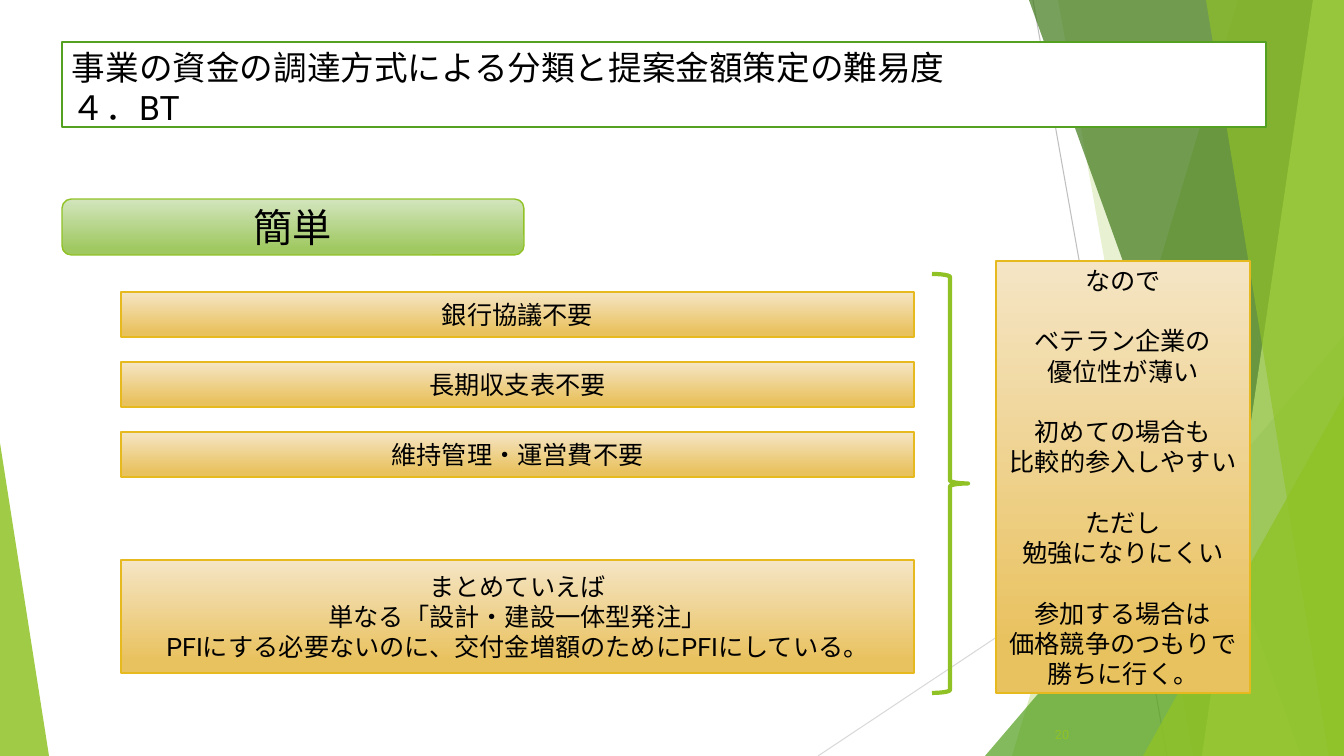
from lxml import etree
from pptx import Presentation
from pptx import util as u
from pptx.dml.color import RGBColor
from pptx.enum import shapes, text
from pptx.oxml import ns

PX = 914400 / 100.8
WIDTH, HEIGHT = 1344, 756
FONT = "Roboto"
COLORS = {
    "black": "000000", "white": "FFFFFF", "lime": "90C226", "green": "54A021",
    "forest": "3F7819", "pale": "C0E474", "gold": "E6B91E",
    "gray": "BFBFBF", "silver": "D9D9D9",
}
GREEN_FADE = ("D3E5BE", "A0C962")
GOLD_FADE = ("F5E5C5", "E9C260")

# from x, from y, to x, to y, colour
BACK_LINES = [(1033, 0, 1167, 756, "gray"), (1344, 406, 818, 756, "silver")]
# Bands reach the right edge: left x at the top, left x at the bottom, colour, opacity
BAND, TRIANGLE = "band", "triangle"
DECORATION = [
    (BAND, (1238, 1012), "lime", 30),
    (BAND, (1058, 1193), "lime", 20),
    (TRIANGLE, (985, 336, 359, 420, 1), "green", 72),
    (BAND, (1029, 1301), "forest", 70),
    (BAND, (1313, 1202), "pale", 70),
    (BAND, (1206, 1329), "lime", 65),
    (TRIANGLE, (1143, 396, 201, 360, 1), "lime", 80),
    (TRIANGLE, (0, 443, 49, 313, 0), "lime", 85),
]

TITLE = ["事業の資金の調達方式による分類と提案金額策定の難易度", "４．BT"]
VERDICT = "簡単"
REASONS = ["銀行協議不要", "長期収支表不要", "維持管理・運営費不要"]
SUMMARY = [
    "まとめていえば",
    "単なる「設計・建設一体型発注」",
    "PFIにする必要ないのに、交付金増額のためにPFIにしている。",
]
CONCLUSIONS = [
    ["なので"],
    ["ベテラン企業の", "優位性が薄い"],
    ["初めての場合も", "比較的参入しやすい"],
    ["ただし", "勉強になりにくい"],
    ["参加する場合は", "価格競争のつもりで", "勝ちに行く。"],
]
PAGE_NUMBER = "20"

REASON_LEFT, REASON_TOP, REASON_WIDTH, REASON_HEIGHT = 121, 292, 793, 45
REASON_STEP = 70
GROUP_GAP = 21.6


def emu(*lengths):
    return [u.Emu(round(length * PX)) for length in lengths]


def rgb(name):
    return RGBColor.from_string(COLORS.get(name, name))


def fill_solid(shape, color, opacity=100):
    shape.fill.solid()
    shape.fill.fore_color.rgb = rgb(color)
    if opacity < 100:
        color_element = shape.fill._xPr.find(ns.qn("a:solidFill"))[0]
        alpha = etree.SubElement(color_element, ns.qn("a:alpha"))
        alpha.set("val", str(opacity * 1000))


def fill_fade(shape, fade):
    """Fill from top to bottom, the second colour being reached at 88 %."""
    shape.fill.gradient()
    shape.fill.gradient_angle = 270
    for stop, color, position in zip(shape.fill.gradient_stops, fade, (0, 0.88)):
        stop.color.rgb = rgb(color)
        stop.position = position


def set_line(shape, color, width):
    shape.line.color.rgb = rgb(color)
    shape.line.width = u.Pt(width)


def add_preset(slide, kind, box):
    shape = slide.shapes.add_shape(kind, *emu(*box))
    shape.shadow.inherit = False
    return shape


def add_run(paragraph, words, size, color="black"):
    run = paragraph.add_run()
    run.text = words
    run.font.size = u.Pt(size)
    run.font.color.rgb = rgb(color)
    run.font.name = FONT
    east_asian = etree.SubElement(run.font._element, ns.qn("a:ea"))
    east_asian.set("typeface", FONT)


def add_text(shape, groups, size):
    """Write centred lines, with one line of space between groups."""
    frame = shape.text_frame
    frame.word_wrap = True
    frame.vertical_anchor = text.MSO_ANCHOR.MIDDLE
    paragraph = frame.paragraphs[0]
    for group_index, group in enumerate(groups):
        for line_index, words in enumerate(group):
            if group_index or line_index:
                paragraph = frame.add_paragraph()
            if group_index and not line_index:
                paragraph.space_before = u.Pt(GROUP_GAP)
            paragraph.alignment = text.PP_ALIGN.CENTER
            add_run(paragraph, words, size)


def add_fade_box(slide, box, groups, size=18, fade=GOLD_FADE, line="gold",
                 kind=shapes.MSO_SHAPE.RECTANGLE):
    shape = add_preset(slide, kind, box)
    fill_fade(shape, fade)
    set_line(shape, line, 1)
    add_text(shape, groups, size)


def add_background(slide):
    for *ends, color in BACK_LINES:
        line = slide.shapes.add_connector(shapes.MSO_CONNECTOR.STRAIGHT, *emu(*ends))
        set_line(line, color, 0.75)
        etree.SubElement(line._element.spPr, ns.qn("a:effectLst"))
    for kind, geometry, color, opacity in DECORATION:
        if kind == BAND:
            top, bottom = geometry
            builder = slide.shapes.build_freeform(top, 0, scale=PX)
            builder.add_line_segments([(WIDTH, 0), (WIDTH, HEIGHT), (bottom, HEIGHT)])
            shape = builder.convert_to_shape()
            shape.shadow.inherit = False
        else:
            *box, apex = geometry
            shape = add_preset(slide, shapes.MSO_SHAPE.ISOSCELES_TRIANGLE, box)
            shape.adjustments[0] = apex
        fill_solid(shape, color, opacity)
        shape.line.fill.background()


def add_title(slide):
    title = add_preset(slide, shapes.MSO_SHAPE.RECTANGLE, (62, 42, 1204, 85))
    fill_solid(title, "white")
    set_line(title, "green", 1.5)
    title.text_frame.word_wrap = True
    title.text_frame.vertical_anchor = text.MSO_ANCHOR.TOP
    paragraph = title.text_frame.paragraphs[0]
    paragraph.alignment = text.PP_ALIGN.LEFT
    add_run(paragraph, TITLE[0], 24)
    paragraph.add_line_break()
    add_run(paragraph, TITLE[1], 24)


def add_page_number(slide):
    number = slide.shapes.add_textbox(*emu(1000, 716, 79, 37))
    number.text_frame.word_wrap = True
    number.text_frame.vertical_anchor = text.MSO_ANCHOR.MIDDLE
    paragraph = number.text_frame.paragraphs[0]
    paragraph.alignment = text.PP_ALIGN.RIGHT
    add_run(paragraph, PAGE_NUMBER, 9, "lime")


def main():
    presentation = Presentation()
    presentation.slide_width, presentation.slide_height = emu(WIDTH, HEIGHT)
    slide = presentation.slides.add_slide(presentation.slide_layouts[6])
    add_background(slide)
    add_title(slide)
    add_fade_box(slide, (62, 199, 462, 56), [[VERDICT]], 28, GREEN_FADE, "lime",
                 shapes.MSO_SHAPE.ROUNDED_RECTANGLE)
    for index, reason in enumerate(REASONS):
        top = REASON_TOP + index * REASON_STEP
        add_fade_box(slide, (REASON_LEFT, top, REASON_WIDTH, REASON_HEIGHT), [[reason]])
    add_fade_box(slide, (REASON_LEFT, 560, REASON_WIDTH, 113), [SUMMARY])
    brace = add_preset(slide, shapes.MSO_SHAPE.RIGHT_BRACE, (932, 274, 36, 419))
    brace.fill.background()
    set_line(brace, "lime", 3)
    add_fade_box(slide, (996, 261, 254, 432), CONCLUSIONS)
    add_page_number(slide)
    presentation.save("out.pptx")


if __name__ == "__main__":
    main()
